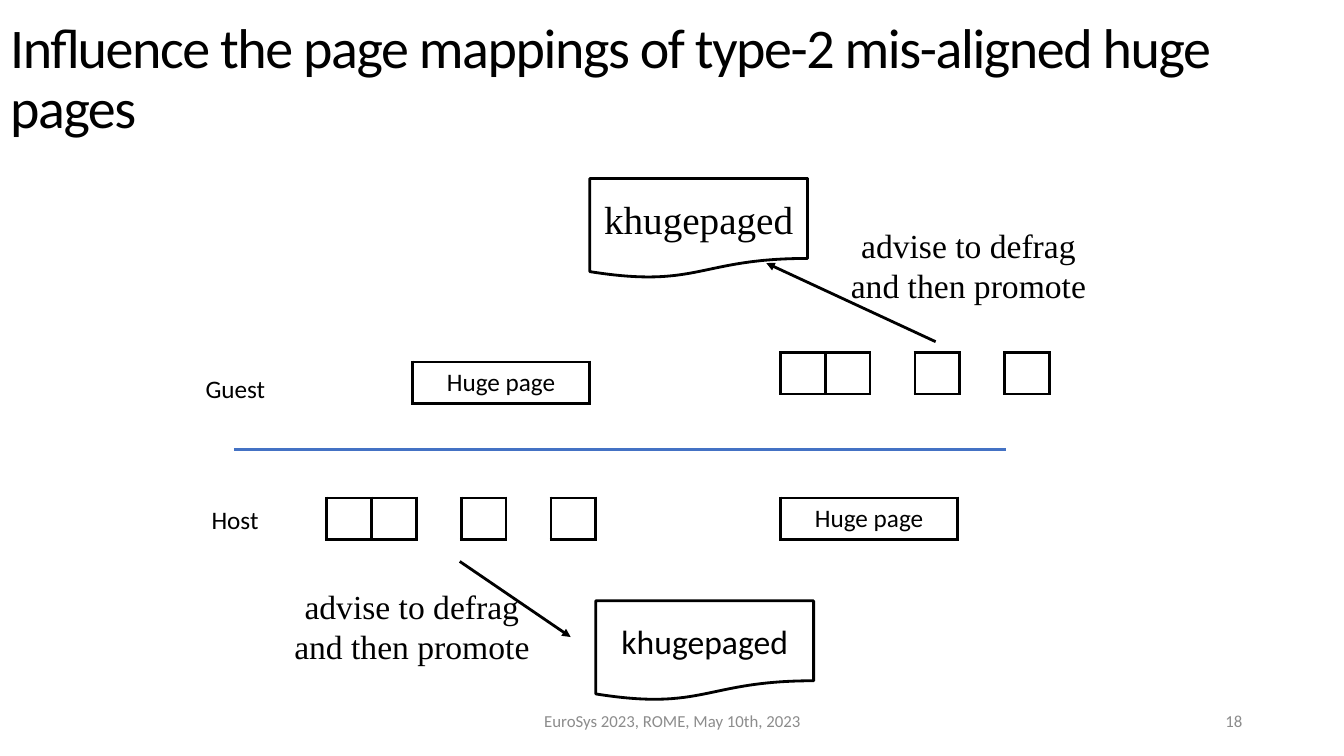
import pptx
import pptx.dml.color
import pptx.enum.shapes
import pptx.enum.text
import pptx.oxml
import pptx.oxml.ns
import pptx.util

Inches = pptx.util.Inches
Pt = pptx.util.Pt
Align = pptx.enum.text.PP_ALIGN
Anchor = pptx.enum.text.MSO_ANCHOR
AutoSize = pptx.enum.text.MSO_AUTO_SIZE

COLORS = {"ink": "000000", "paper": "FFFFFF", "footer": "8C8C8C", "divider": "4472C4"}
SANS = "Calibri"
SERIF = "Times New Roman"
SMALL_PAGE = 0.445
PAGE_HEIGHT = 0.41
HUGE_PAGE = 1.76


def rgb(name):
    return pptx.dml.color.RGBColor.from_string(COLORS[name])


def write(frame, text, size=18, font=SANS, color="ink", align=Align.LEFT,
          anchor=Anchor.TOP, wrap=True, tracking=None, line_spacing=None):
    frame.word_wrap = wrap
    frame.vertical_anchor = anchor
    para = frame.paragraphs[0]
    para.alignment = align
    if line_spacing:
        para.line_spacing = line_spacing
    span = para.add_run()
    span.text = text
    span.font.size = Pt(size)
    span.font.name = font
    span.font.color.rgb = rgb(color)
    if tracking is not None:
        span.font._element.set("spc", str(int(tracking * 100)))


def add_text(page, box, text, **style):
    label = page.shapes.add_textbox(*map(Inches, box))
    write(label.text_frame, text, **style)


def add_line(page, start, end, color="ink", width=2, arrow=False):
    line = page.shapes.add_connector(
        pptx.enum.shapes.MSO_CONNECTOR.STRAIGHT, *map(Inches, start + end))
    line.line.color.rgb = rgb(color)
    line.line.width = Pt(width)
    if arrow:
        outline = line.line._get_or_add_ln()
        outline.append(pptx.oxml.parse_xml(
            f'<a:tailEnd {pptx.oxml.ns.nsdecls("a")} type="triangle"/>'))
    line._element.spPr.append(pptx.oxml.parse_xml(
        f'<a:effectLst {pptx.oxml.ns.nsdecls("a")}/>'))


def format_cell(cell, drawn_sides):
    """Fill the cell and draw a border only on the given sides (of "LRTB")."""
    cell.fill.solid()
    cell.fill.fore_color.rgb = rgb("paper")
    cell.margin_top = cell.margin_bottom = 0
    cell.vertical_anchor = Anchor.MIDDLE
    properties = cell._tc.get_or_add_tcPr()
    for index, side in enumerate("LRTB"):
        paint = "<a:noFill/>"
        if side in drawn_sides:
            paint = f'<a:solidFill><a:srgbClr val="{COLORS["ink"]}"/></a:solidFill>'
        properties.insert(index, pptx.oxml.parse_xml(
            f'<a:ln{side} {pptx.oxml.ns.nsdecls("a")} w="{Pt(2.25)}">{paint}</a:ln{side}>'))


def add_page_table(page, left, top, width, columns):
    frame = page.shapes.add_table(
        1, columns, *map(Inches, (left, top, width, PAGE_HEIGHT)))
    table = frame.table
    table.first_row = False
    table.horz_banding = False
    return table


def add_small_pages(page, left, top):
    """Two adjacent small pages, then two single ones with gaps before them."""
    slots = "##.#.#"
    table = add_page_table(page, left, top, SMALL_PAGE * len(slots), len(slots))
    for cell, slot in zip(table.iter_cells(), slots):
        format_cell(cell, "LRTB" if slot == "#" else "LR")


def add_huge_page(page, left, top):
    cell = add_page_table(page, left, top, HUGE_PAGE, 1).cell(0, 0)
    format_cell(cell, "LRTB")
    write(cell.text_frame, "Huge page", align=Align.CENTER, anchor=Anchor.MIDDLE)


def add_daemon(page, left, top, size, font):
    daemon = page.shapes.add_shape(
        pptx.enum.shapes.MSO_SHAPE.FLOWCHART_DOCUMENT,
        *map(Inches, (left, top, 2.16, 0.99)))
    daemon.shadow.inherit = False
    daemon.fill.solid()
    daemon.fill.fore_color.rgb = rgb("paper")
    daemon.line.color.rgb = rgb("ink")
    daemon.line.width = Pt(2)
    write(daemon.text_frame, "khugepaged", size=size, font=font,
          align=Align.CENTER, anchor=Anchor.MIDDLE)


def add_advice(page, left, top, start, end):
    add_line(page, start, end, arrow=True)
    add_text(page, (left, top, 2.85, 0.91), "advise to defrag and then promote",
             size=24, font=SERIF, align=Align.CENTER)


def add_title(page, left, top, width, height):
    title = page.shapes.title
    title.left, title.top, title.width, title.height = map(
        Inches, (left, top, width, height))
    write(title.text_frame, "Influence the page mappings of type-2 mis-aligned huge pages",
          size=40, anchor=Anchor.MIDDLE, tracking=-1, line_spacing=0.9)
    title.text_frame.auto_size = AutoSize.NONE


def add_guest(page, left, top):
    add_text(page, (left, top + 1.88, 0.8, 0.4), "Guest", wrap=False)
    add_huge_page(page, left + 2.15, top + 1.82)
    add_small_pages(page, left + 5.8, top + 1.73)
    add_daemon(page, left + 3.91, top, size=28, font=SERIF)
    add_advice(page, left + 6.24, top + 0.41,
               start=(left + 7.34, top + 1.62), end=(left + 5.66, top + 0.84))


def add_host(page, left, top):
    add_text(page, (left + 0.06, top + 0.01, 0.67, 0.4), "Host", wrap=False)
    add_small_pages(page, left + 1.3, top)
    add_huge_page(page, left + 5.8, top)
    add_daemon(page, left + 3.97, top + 1.02, size=24, font=SANS)
    add_advice(page, left + 0.72, top + 0.82,
               start=(left + 2.62, top + 0.63), end=(left + 3.72, top + 1.38))


def add_footer(page, top):
    style = {"size": 12, "color": "footer", "anchor": Anchor.MIDDLE}
    add_text(page, (4.42, top, 4.5, 0.4), "EuroSys 2023, ROME, May 10th, 2023",
             align=Align.CENTER, **style)
    add_text(page, (9.42, top, 3, 0.4), "18", align=Align.RIGHT, **style)


def main():
    deck = pptx.Presentation()
    deck.slide_width = Inches(13.33)
    deck.slide_height = Inches(7.5)
    page = deck.slides.add_slide(deck.slide_layouts.get_by_name("Title Only"))
    add_title(page, 0, 0.3, 13.31, 0.99)
    add_footer(page, 6.95)
    add_guest(page, 1.94, 1.77)
    add_line(page, (2.32, 4.46), (9.98, 4.46), color="divider", width=2.25)
    add_host(page, 1.94, 4.94)
    deck.save("out.pptx")


if __name__ == "__main__":
    main()
